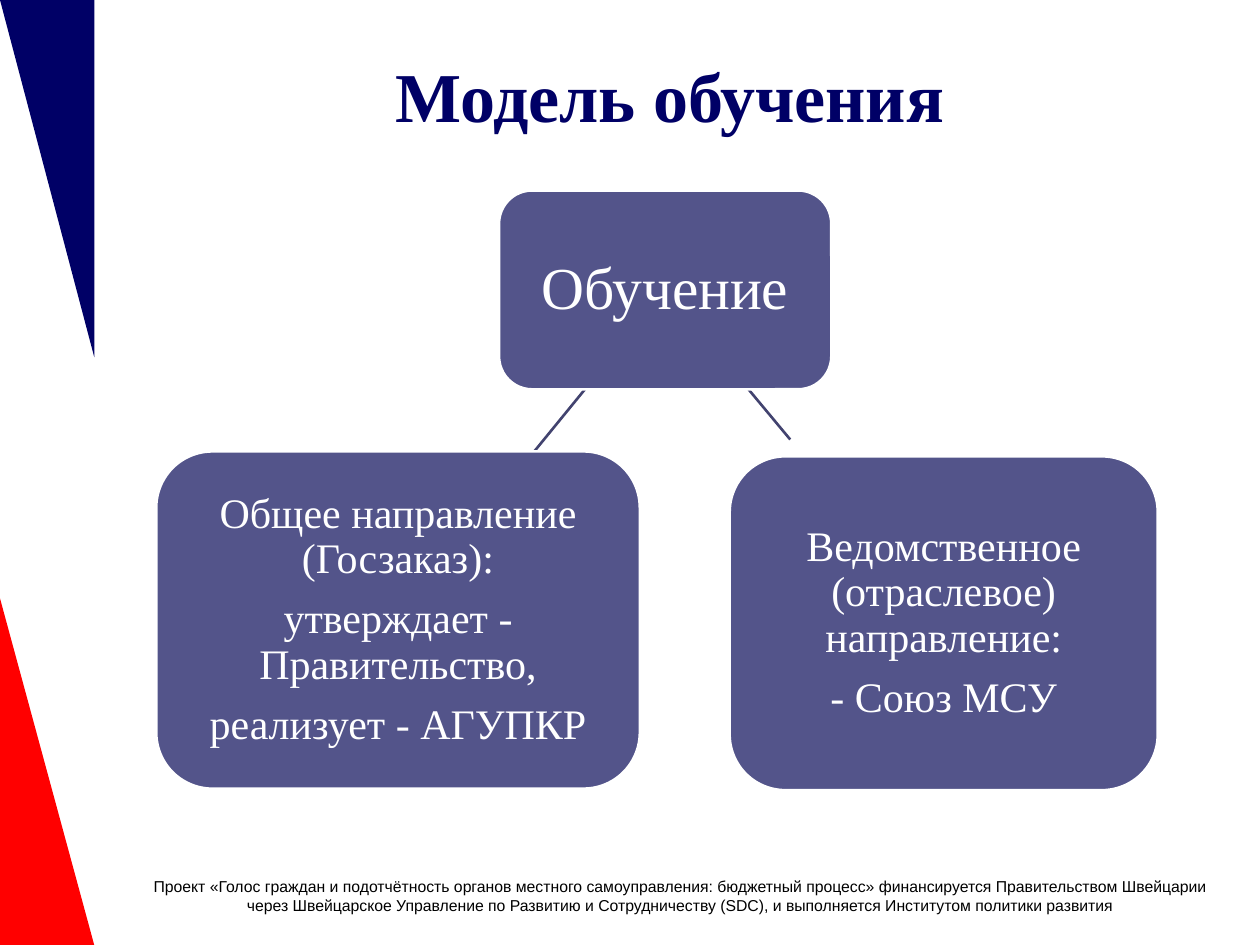
"""Builds the training model slide: a root box that branches into two directions."""
from lxml import etree
from pptx import Presentation
from pptx.dml.color import RGBColor
from pptx.enum.shapes import MSO_CONNECTOR, MSO_SHAPE
from pptx.enum.text import MSO_ANCHOR, PP_ALIGN
from pptx.oxml.ns import qn
from pptx.util import Cm, Pt

CENTER = PP_ALIGN.CENTER
MIDDLE = MSO_ANCHOR.MIDDLE
ROUNDED = MSO_SHAPE.ROUNDED_RECTANGLE
TRIANGLE = MSO_SHAPE.RIGHT_TRIANGLE
STRAIGHT = MSO_CONNECTOR.STRAIGHT

COLORS = {
    "navy": "000066",
    "red": "FF0000",
    "box": "53548A",
    "branch": "42436F",
    "white": "FFFFFF",
    "black": "000000",
}
SERIF = "Times New Roman"
SANS = "Arial"

FOOTER = (
    "Проект «Голос граждан и подотчётность органов местного самоуправления: "
    "бюджетный процесс» финансируется Правительством Швейцарии через Швейцарское "
    "Управление по Развитию и Сотрудничеству (SDC), и выполняется Институтом "
    "политики развития"
)
BOXES = [
    ((10.06, 3.84, 6.7, 4.01), 34, 0.23, ["Обучение"]),
    ((14.71, 9.2, 8.63, 6.73), 24, 0.18,
     ["Ведомственное (отраслевое) направление:", "- Союз МСУ"]),
    ((3.15, 9.1, 9.75, 6.8), 24, 0.18,
     ["Общее направление (Госзаказ):", "утверждает - Правительство,",
      "реализует - АГУПКР"]),
]
BRANCHES = [(15.09, 7.85, 15.93, 8.86), (11.79, 7.85, 10.77, 9.1)]


def rgb(name):
    """Return the named colour."""
    return RGBColor.from_string(COLORS[name])


def lengths(values):
    """Turn numbers in centimetres into lengths."""
    return [Cm(value) for value in values]


def write(shape, texts, font_name, size, color, bold=False, margin=0.25):
    """Fill a shape with centred paragraphs and return them."""
    frame = shape.text_frame
    frame.word_wrap = True
    frame.vertical_anchor = MIDDLE
    frame.margin_left = frame.margin_right = Cm(margin)
    frame.margin_top = frame.margin_bottom = Cm(min(margin, 0.23))
    frame.text = "\n".join(texts)
    for para in frame.paragraphs:
        para.alignment = CENTER
        para.font.name = font_name
        para.font.size = Pt(size)
        para.font.bold = bold
        para.font.color.rgb = rgb(color)
    return frame.paragraphs


def add_solid(page, kind, place, color):
    """Add a filled preset shape without line or shadow."""
    shape = page.shapes.add_shape(kind, *lengths(place))
    shape.shadow.inherit = False
    shape.fill.solid()
    shape.fill.fore_color.rgb = rgb(color)
    shape.line.fill.background()
    return shape


def add_branch(page, ends):
    """Add a line from the root box towards a direction."""
    branch = page.shapes.add_connector(STRAIGHT, *lengths(ends))
    branch.line.color.rgb = rgb("branch")
    branch.line.width = Pt(1.5)
    etree.SubElement(branch._element.spPr, qn("a:effectLst"))


def add_box(page, place, size, margin, texts):
    """Add a rounded box with its paragraphs."""
    box = add_solid(page, ROUNDED, place, "box")
    box.line.color.rgb = rgb("white")
    box.line.width = Pt(1.5)
    for para in write(box, texts, SERIF, size, "white", margin=margin):
        para.line_spacing = 0.9
        para.space_after = Pt(round(size * 0.35, 1))


def add_title(page, text):
    """Place and format the title placeholder."""
    title = page.shapes.title
    title.left, title.top, title.width, title.height = lengths((2.7, 0.4, 21.6, 3))
    write(title, [text], SERIF, 40, "navy", bold=True)


def main():
    """Build and save the slide."""
    deck = Presentation()
    deck.slide_width, deck.slide_height = lengths((25.4, 19.05))
    page = deck.slides.add_slide(deck.slide_layouts[5])
    add_solid(page, TRIANGLE, (0, 12.06, 1.9, 6.99), "red")
    add_solid(page, TRIANGLE, (0, 0, 1.9, 7.2), "navy").rotation = 180
    footer = page.shapes.add_textbox(*lengths((2.5, 17.58, 22.4, 0.96)))
    write(footer, [FOOTER], SANS, 9, "black")
    add_title(page, "Модель обучения")
    for ends in BRANCHES:
        add_branch(page, ends)
    for box in BOXES:
        add_box(page, *box)
    deck.save("out.pptx")


if __name__ == "__main__":
    main()
